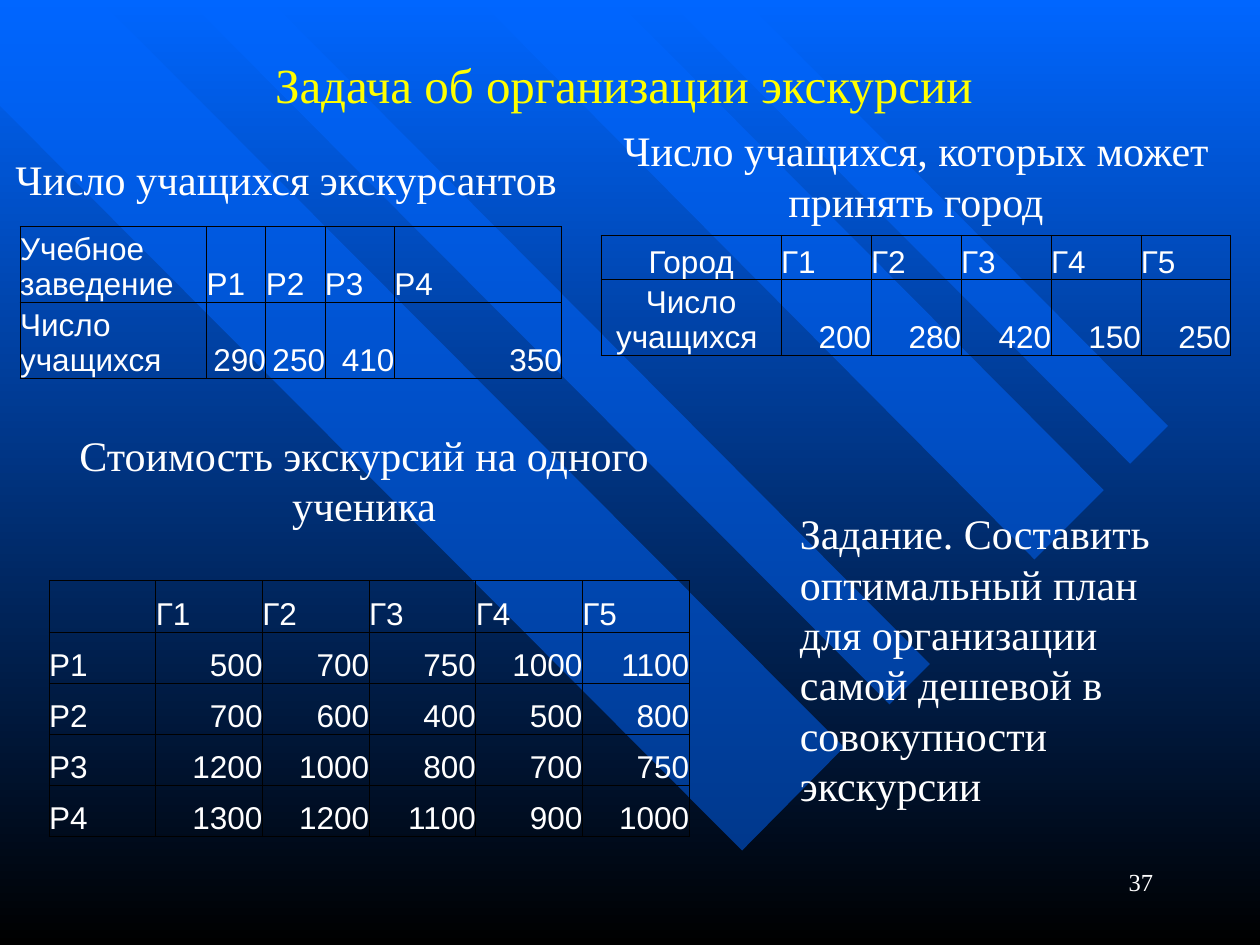
import pptx
import pptx.util
import pptx.dml.color
import pptx.enum.text
import pptx.oxml
import pptx.oxml.ns
from lxml import etree

Inches = pptx.util.Inches
Align = pptx.enum.text.PP_ALIGN
Anchor = pptx.enum.text.MSO_ANCHOR
Fit = pptx.enum.text.MSO_AUTO_SIZE
qn = pptx.oxml.ns.qn

SERIF = "Times New Roman"
SANS = "Arial"
WHITE = "FFFFFF"
BLUE = "0066FF"
BLACK = "000000"
YELLOW = "FFFF00"

BANDS = [
    [(6.7, 5.93), (0.79, 0), (0, 0), (0, 0.84), (5.89, 6.75)],
    [(2.14, 0), (7.38, 5.27), (7.06, 5.59), (1.49, 0)],
    [(4.89, 0), (8.76, 3.89), (8.21, 4.44), (3.8, 0)],
    [(5.3, 0), (8.97, 3.68), (9.27, 3.38), (5.91, 0)],
]
SCHOOLS = ["Р1", "Р2", "Р3", "Р4"]
TOWNS = ["Г1", "Г2", "Г3", "Г4", "Г5"]
PUPILS = ["290", "250", "410", "350"]
PLACES = ["200", "280", "420", "150", "250"]
COSTS = [
    ["500", "700", "750", "1000", "1100"],
    ["700", "600", "400", "500", "800"],
    ["1200", "1000", "800", "700", "750"],
    ["1300", "1200", "1100", "900", "1000"],
]


def color(code):
    return pptx.dml.color.RGBColor.from_string(code)


class Page:
    def __init__(self, deck):
        self.slide = deck.slides.add_slide(deck.slide_layouts[5])
        self.shapes = self.slide.shapes

    def style(self, para, size, face, code, align):
        para.alignment = align
        para.font.size = pptx.util.Pt(size)
        para.font.name = face
        para.font.color.rgb = color(code)

    def backdrop(self, *codes):
        fill = self.slide.background.fill
        fill.gradient()
        fill.gradient_angle = 270
        for place, (stop, code) in enumerate(zip(fill.gradient_stops, codes)):
            stop.color.rgb = color(code)
            stop.position = place

    def band(self, points):
        start, *rest = [(Inches(x), Inches(y)) for x, y in points]
        pen = self.shapes.build_freeform(*start)
        pen.add_line_segments(rest, close=True)
        shape = pen.convert_to_shape()
        shape.shadow.inherit = False
        shape.line.fill.background()
        shape.fill.solid()
        shape.fill.fore_color.rgb = color(BLUE)
        tone = shape.element.spPr.find(".//" + qn("a:srgbClr"))
        etree.SubElement(tone, qn("a:alpha"), val="50000")

    def title(self, text, left, top, width, height):
        shape = self.shapes.title
        shape.left, shape.top = Inches(left), Inches(top)
        shape.width, shape.height = Inches(width), Inches(height)
        frame = shape.text_frame
        frame.text = text
        frame.vertical_anchor = Anchor.MIDDLE
        self.style(frame.paragraphs[0], 28, SERIF, YELLOW, Align.CENTER)
        self.shapes.element.append(shape.element)

    def text(self, text, left, top, width, height, align=Align.CENTER, size=24, wrap=True):
        box = self.shapes.add_textbox(Inches(left), Inches(top), Inches(width), Inches(height))
        frame = box.text_frame
        frame.word_wrap = wrap
        frame.auto_size = Fit.SHAPE_TO_FIT_TEXT
        frame.text = text
        self.style(frame.paragraphs[0], size, SERIF, WHITE, align)

    def table(self, data, left, top, height, widths, row_height, head=Align.LEFT):
        frame = self.shapes.add_table(len(data), len(widths), Inches(left), Inches(top),
                                      Inches(sum(widths)), Inches(height))
        grid = frame.table
        grid.first_row = grid.horz_banding = False
        for column, width in zip(grid.columns, widths):
            column.width = Inches(width)
        for row, values in zip(grid.rows, data):
            row.height = Inches(row_height)
            for index, (cell, value) in enumerate(zip(row.cells, values)):
                label = Align.LEFT if index else head
                self.cell(cell, value, Align.RIGHT if value.isdigit() else label)
        frame.height = Inches(height)

    def cell(self, cell, value, align):
        cell.text = value
        cell.vertical_anchor = Anchor.BOTTOM
        cell.margin_left = cell.margin_right = 0
        cell.margin_top = cell.margin_bottom = 0
        cell.fill.background()
        self.style(cell.text_frame.paragraphs[0], 18, SANS, WHITE, align)
        self.border(cell)

    def border(self, cell):
        props = cell._tc.get_or_add_tcPr()
        for index, side in enumerate(("a:lnL", "a:lnR", "a:lnT", "a:lnB")):
            line = etree.Element(qn(side), w="6350")
            fill = etree.SubElement(line, qn("a:solidFill"))
            etree.SubElement(fill, qn("a:srgbClr"), val=BLACK)
            props.insert(index, line)


def main():
    deck = pptx.Presentation()
    deck.slide_width, deck.slide_height = Inches(10), Inches(7.5)
    page = Page(deck)
    page.backdrop(BLUE, BLACK)
    for points in BANDS:
        page.band(points)

    page.title("Задача об организации экскурсии", 0.7, 0, 8.5, 1.33)
    page.text("37", 7.17, 6.83, 2.08, 0.5, Align.RIGHT, 14)

    page.text("Число учащихся экскурсантов", 0, 1.17, 4.54, 0.5, wrap=False)
    page.table([["Учебное заведение"] + SCHOOLS, ["Число учащихся"] + PUPILS],
               0.16, 1.8, 1.2, [1.48, 0.47, 0.47, 0.55, 1.33], 0.32)

    page.text("Число учащихся, которых может принять город", 4.77, 0.94, 5, 0.91)
    first = 1.43
    rest = (5 - first) / len(TOWNS)
    page.table([["Город"] + TOWNS, ["Число учащихся "] + PLACES],
               4.77, 1.87, 0.95, [first] + [rest] * len(TOWNS), 0.35, Align.CENTER)

    page.text("Стоимость экскурсий на одного ученика", 0.39, 3.36, 5, 0.91)
    prices = [[""] + TOWNS] + [[school] + row for school, row in zip(SCHOOLS, COSTS)]
    height, count = 2.03, len(TOWNS) + 1
    page.table(prices, 0.39, 4.61, height, [5.08 / count] * count, height / len(prices))

    page.text("Задание. Составить оптимальный план для организации самой дешевой "
              "в совокупности экскурсии", 6.25, 3.98, 3.13, 2.52, Align.LEFT)
    deck.save("out.pptx")


if __name__ == "__main__":
    main()
